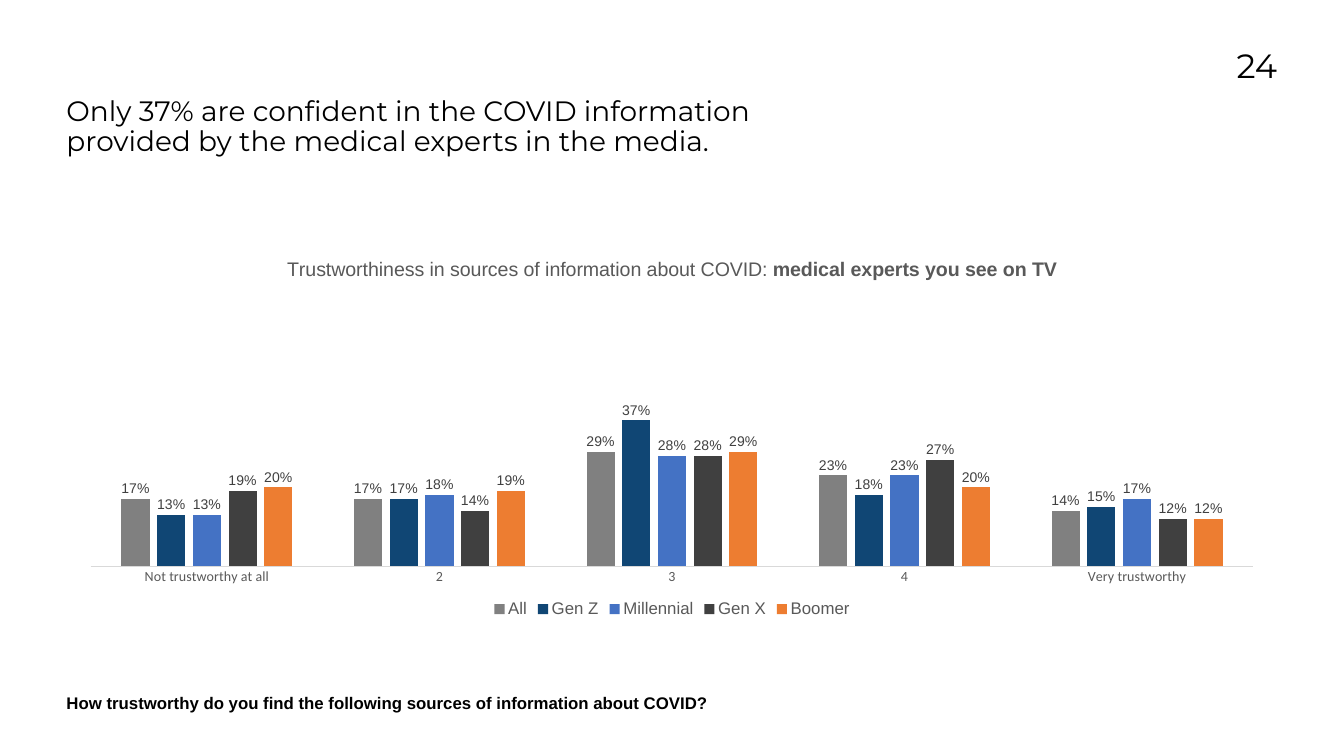
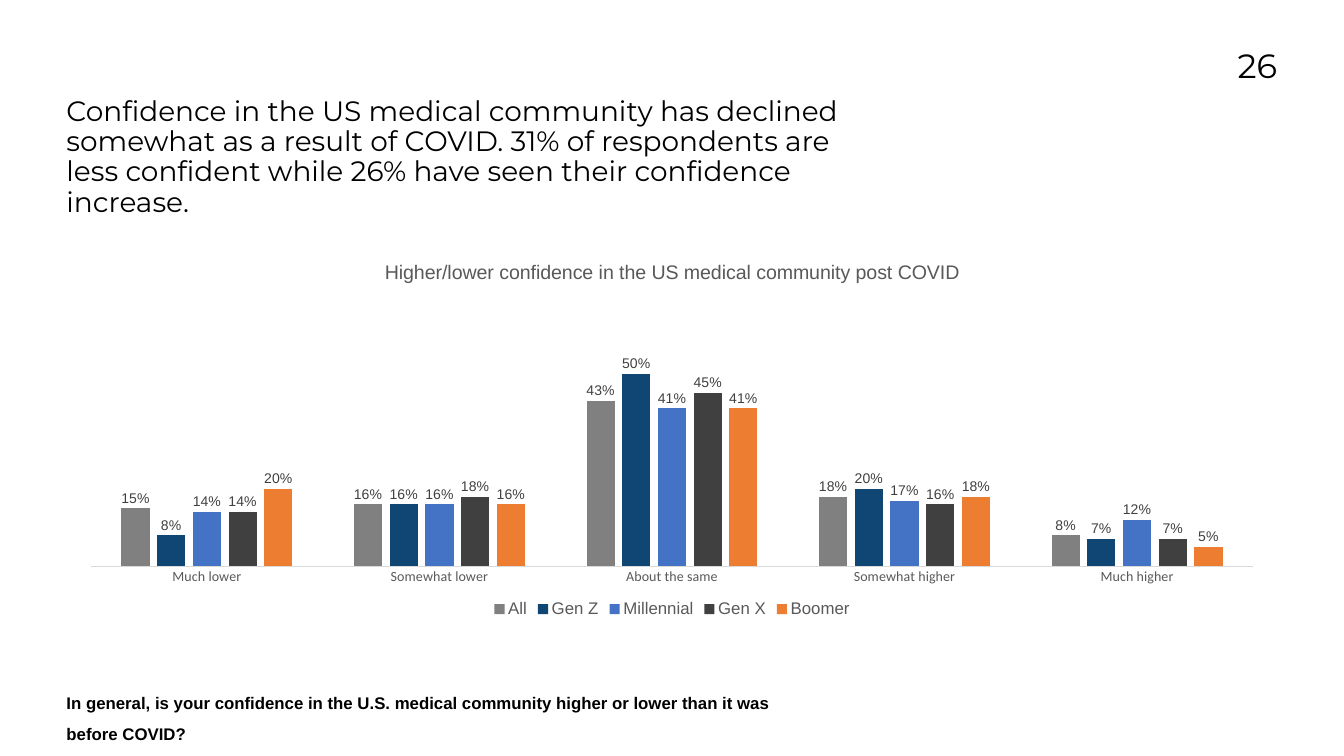
"""Two survey slides on trust in medical experts after COVID, by generation."""
from dataclasses import dataclass

from pptx import Presentation
from pptx.chart.data import CategoryChartData
from pptx.dml.color import RGBColor
from pptx.enum.chart import XL_CHART_TYPE, XL_LABEL_POSITION, XL_LEGEND_POSITION, XL_TICK_MARK
from pptx.enum.text import PP_ALIGN
from pptx.util import Cm, Pt

COLUMNS = XL_CHART_TYPE.COLUMN_CLUSTERED
OUTSIDE_END = XL_LABEL_POSITION.OUTSIDE_END
LEGEND_BOTTOM = XL_LEGEND_POSITION.BOTTOM
NO_TICK = XL_TICK_MARK.NONE
LEFT, RIGHT = PP_ALIGN.LEFT, PP_ALIGN.RIGHT


@dataclass(frozen=True)
class Theme:
    black: str = "000000"
    muted: str = "595959"
    label: str = "404040"
    rule: str = "D9D9D9"
    generations: tuple = (
        ("All", "808080"),
        ("Gen Z", "104674"),
        ("Millennial", "4472C4"),
        ("Gen X", "404040"),
        ("Boomer", "ED7D31"),
    )
    heading_font: str = "Montserrat"
    body_font: str = "Arial"
    axis_font: str = "Calibri"
    page_size: int = 48
    heading_size: int = 40
    chart_title_size: int = 28
    body_size: int = 24
    label_size: int = 20
    chart_size: int = 10


THEME = Theme()
MARGIN = Cm(3.35)

SURVEY = [
    {
        "page": "24",
        "headline": "Only 37% are confident in the COVID information provided by "
                    "the medical experts in the media.",
        "chart_title": ("Trustworthiness in sources of information about COVID: ",
                        "medical experts you see on TV"),
        "answers": ["Not trustworthy at all", "2", "3", "4", "Very trustworthy"],
        "shares": [
            (0.17, 0.17, 0.29, 0.23, 0.14),
            (0.13, 0.17, 0.37, 0.18, 0.15),
            (0.13, 0.18, 0.28, 0.23, 0.17),
            (0.19, 0.14, 0.28, 0.27, 0.12),
            (0.20, 0.19, 0.29, 0.20, 0.12),
        ],
        "question": "How trustworthy do you find the following sources of "
                    "information about COVID?",
    },
    {
        "page": "26",
        "headline": "Confidence in the US medical community has declined somewhat "
                    "as a result of COVID. 31% of respondents are less confident "
                    "while 26% have seen their confidence increase.",
        "chart_title": ("Higher/lower confidence in the US medical community post COVID",),
        "answers": ["Much lower", "Somewhat lower", "About the same",
                    "Somewhat higher", "Much higher"],
        "shares": [
            (0.15, 0.16, 0.43, 0.18, 0.08),
            (0.08, 0.16, 0.50, 0.20, 0.07),
            (0.14, 0.16, 0.41, 0.17, 0.12),
            (0.14, 0.18, 0.45, 0.16, 0.07),
            (0.20, 0.16, 0.41, 0.18, 0.05),
        ],
        "question": "In general, is your confidence in the U.S. medical community "
                    "higher or lower than it was before COVID?",
    },
]


def style_font(font, name, size, color, bold=False):
    font.name = name
    font.size = Pt(size)
    font.bold = bold
    font.color.rgb = RGBColor.from_string(color)


def add_text(slide, text, box, name, size, bold=False, align=LEFT, spacing=1.0):
    frame = slide.shapes.add_textbox(*box).text_frame
    frame.word_wrap = True
    frame.margin_left = frame.margin_right = frame.margin_top = frame.margin_bottom = 0
    paragraph = frame.paragraphs[0]
    paragraph.text = text
    paragraph.alignment = align
    paragraph.line_spacing = spacing
    style_font(paragraph.font, name, size, THEME.black, bold)


deck = Presentation()
deck.slide_width, deck.slide_height = Cm(67.74), Cm(38.1)
blank_layout = deck.slide_layouts[6]

for topic in SURVEY:
    slide = deck.slides.add_slide(blank_layout)
    add_text(slide, topic["page"], (Cm(58.65), Cm(2.24), Cm(5.72), Cm(4.17)),
             THEME.heading_font, THEME.page_size, align=RIGHT)

    data = CategoryChartData(number_format="0%")
    data.categories = topic["answers"]
    for (generation, color), shares in zip(THEME.generations, topic["shares"]):
        data.add_series(generation, shares)
    chart = slide.shapes.add_chart(COLUMNS, MARGIN, Cm(12.4), Cm(61.04), Cm(18.95), data).chart
    style_font(chart.font, THEME.axis_font, THEME.chart_size, THEME.black)

    chart_title = chart.chart_title.text_frame.paragraphs[0]
    style_font(chart_title.font, THEME.body_font, THEME.chart_title_size, THEME.muted)
    for position, wording in enumerate(topic["chart_title"]):
        run = chart_title.add_run()
        run.text = wording
        run.font.bold = position > 0

    chart.has_legend = True
    chart.legend.position = LEGEND_BOTTOM
    chart.legend.include_in_layout = False
    style_font(chart.legend.font, THEME.body_font, THEME.body_size, THEME.muted)

    answer_axis = chart.category_axis
    answer_axis.major_tick_mark = answer_axis.minor_tick_mark = NO_TICK
    answer_axis.format.line.color.rgb = RGBColor.from_string(THEME.rule)
    answer_axis.format.line.width = Pt(0.75)
    style_font(answer_axis.tick_labels.font, THEME.axis_font, THEME.label_size, THEME.muted)

    share_axis = chart.value_axis
    share_axis.minimum_scale, share_axis.maximum_scale = 0, 0.7
    share_axis.has_major_gridlines = False
    share_axis.tick_labels.number_format = "0%"
    share_axis.tick_labels.number_format_is_linked = False
    share_axis.visible = False

    plot = chart.plots[0]
    plot.vary_by_categories = False
    plot.gap_width, plot.overlap = 219, -27
    for series, (generation, color) in zip(plot.series, THEME.generations):
        series.format.fill.solid()
        series.format.fill.fore_color.rgb = RGBColor.from_string(color)
        series.invert_if_negative = False
        labels = series.data_labels
        labels.show_value = True
        labels.position = OUTSIDE_END
        labels.number_format = "0%"
        labels.number_format_is_linked = False
        style_font(labels.font, THEME.body_font, THEME.label_size, THEME.label)

    add_text(slide, topic["headline"], (MARGIN, Cm(4.9), Cm(40.67), Cm(5.28)),
             THEME.heading_font, THEME.heading_size, spacing=0.9)
    add_text(slide, topic["question"], (MARGIN, Cm(34.42), Cm(36.88), Cm(1.65)),
             THEME.body_font, THEME.body_size, bold=True, spacing=1.5)

deck.save("out.pptx")
